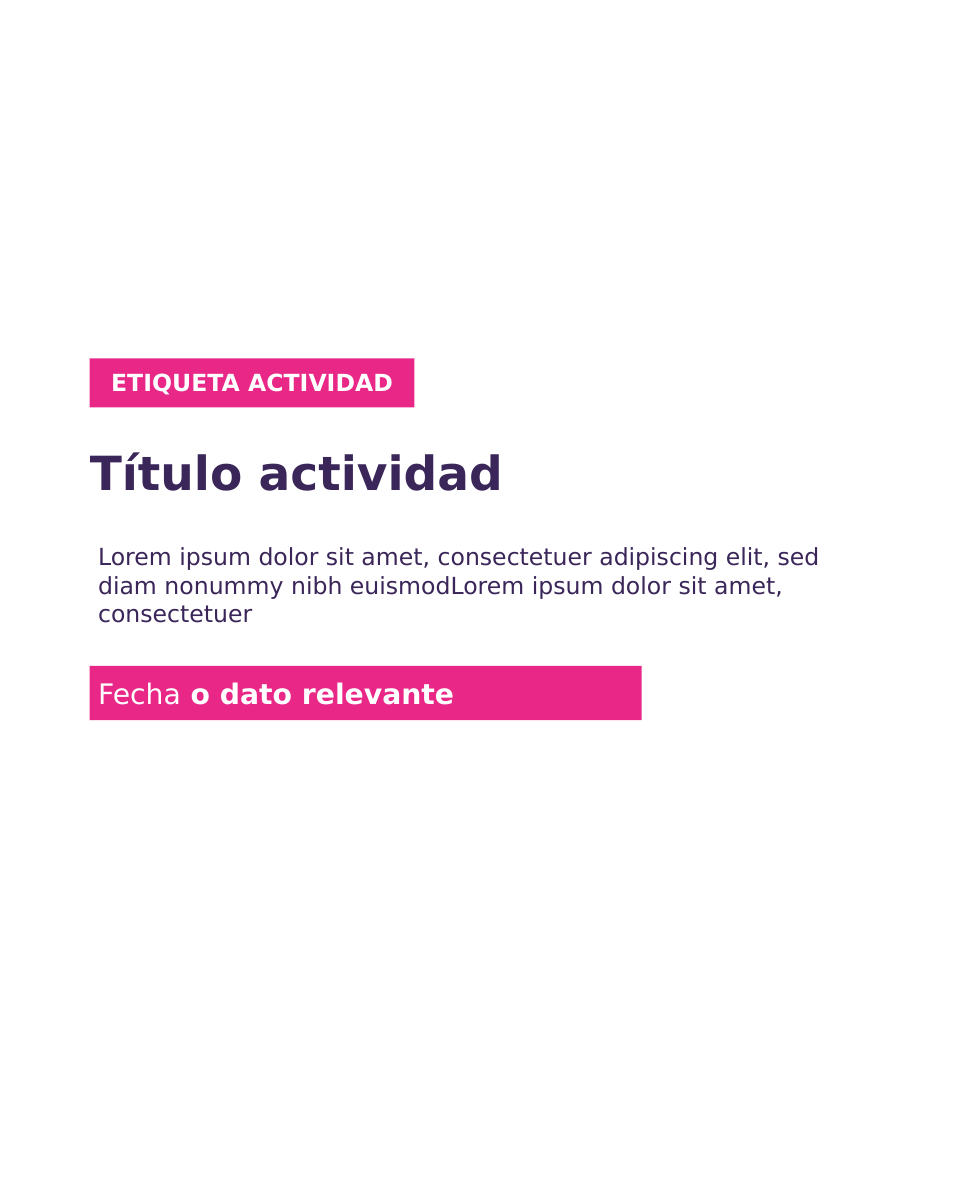
from dataclasses import dataclass

from pptx import Presentation
from pptx.dml.color import RGBColor
from pptx.enum.shapes import MSO_SHAPE
from pptx.enum.text import MSO_ANCHOR, MSO_AUTO_SIZE, PP_ALIGN
from pptx.util import Cm, Pt


@dataclass(frozen=True)
class Theme:
    font: str = "DejaVu Sans"
    pink: RGBColor = RGBColor(0xE8, 0x27, 0x87)
    purple: RGBColor = RGBColor(0x3A, 0x26, 0x59)
    white: RGBColor = RGBColor(0xFF, 0xFF, 0xFF)
    title: Pt = Pt(40)
    date: Pt = Pt(24)
    body: Pt = Pt(20)


theme = Theme()
LEFT = Cm(2.69)


def write_text(shape, runs, size, color, margins, alignment=PP_ALIGN.LEFT):
    """Fill the shape with (text, bold) runs; margins are left and vertical, in cm."""
    side, vertical = margins
    frame = shape.text_frame
    frame_format = {
        "word_wrap": True,
        "auto_size": MSO_AUTO_SIZE.SHAPE_TO_FIT_TEXT,
        "vertical_anchor": MSO_ANCHOR.TOP,
        "margin_left": Cm(side),
        "margin_right": Cm(0.25),
        "margin_top": Cm(vertical),
        "margin_bottom": Cm(vertical),
    }
    for name, value in frame_format.items():
        setattr(frame, name, value)
    paragraph = frame.paragraphs[0]
    paragraph.alignment = alignment
    for text, bold in runs:
        run = paragraph.add_run()
        run.text = text
        for name, value in {"name": theme.font, "size": size, "bold": bold}.items():
            setattr(run.font, name, value)
        run.font.color.rgb = color


def add_banner(slide, top, width, height):
    banner = slide.shapes.add_shape(MSO_SHAPE.RECTANGLE, LEFT, Cm(top), Cm(width), Cm(height))
    banner.shadow.inherit = False
    banner.fill.solid()
    banner.fill.fore_color.rgb = theme.pink
    banner.line.fill.background()
    return banner


presentation = Presentation()
presentation.slide_width = Cm(28.8)
presentation.slide_height = Cm(36.09)
slide = presentation.slides.add_slide(presentation.slide_layouts.get_by_name("Title Only"))

label = add_banner(slide, 10.74, 9.73, 1.47)
write_text(label, [("ETIQUETA ACTIVIDAD", True)], theme.body, theme.white,
           (0.25, 0.3), PP_ALIGN.CENTER)

title = slide.shapes.title
title_box = {"left": LEFT, "top": Cm(13.16), "width": Cm(20.24), "height": Cm(1.96)}
for name, value in title_box.items():
    setattr(title, name, value)
write_text(title, [("Título actividad", True)], theme.title, theme.purple, (0, 0.13))

description = slide.shapes.add_textbox(LEFT, Cm(16.13), Cm(22.28), Cm(2.82))
description_text = (
    "Lorem ipsum dolor sit amet, consectetuer adipiscing elit, sed diam nonummy "
    "nibh euismodLorem ipsum dolor sit amet, consectetuer"
)
write_text(description, [(description_text, False)], theme.body, theme.purple, (0.25, 0.13))

date = add_banner(slide, 19.96, 16.54, 1.63)
write_text(date, [("Fecha", False), (" o dato relevante", True)], theme.date, theme.white,
           (0.25, 0.3))

presentation.save("out.pptx")
